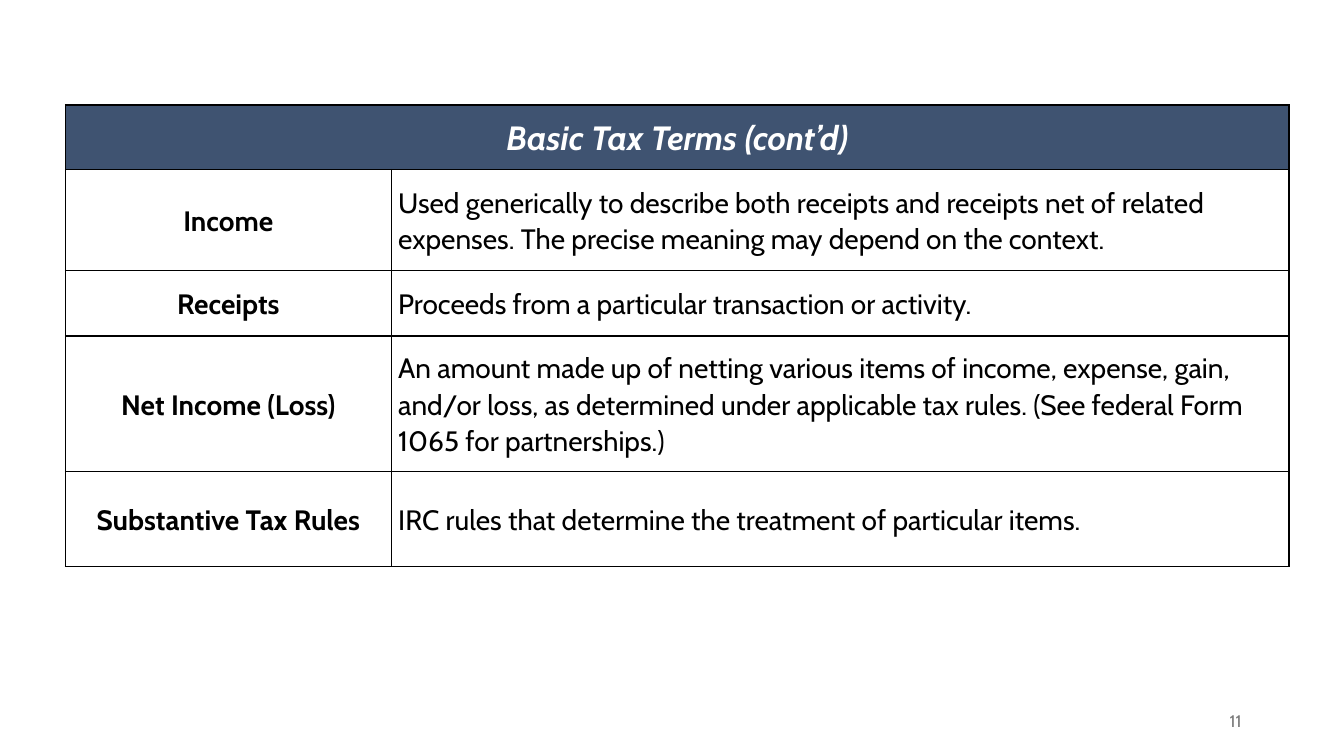
from lxml.etree import SubElement
from pptx import Presentation
from pptx.dml.color import RGBColor
from pptx.enum.text import MSO_ANCHOR, PP_ALIGN
from pptx.oxml.ns import qn
from pptx.util import Pt

HEAD = "Basic Tax Terms (cont’d)"
TERMS = [
    ("Income", "Used generically to describe both receipts and receipts net of "
     "related expenses. The precise meaning may depend on the context."),
    ("Receipts", "Proceeds from a particular transaction or activity."),
    ("Net Income (Loss)", "An amount made up of netting various items of income, "
     "expense, gain, and/or loss, as determined under applicable tax rules. "
     "(See federal Form 1065 for partnerships.)"),
    ("Substantive Tax Rules",
     "IRC rules that determine the treatment of particular items."),
]
PAGE = "11"
FONT = "Cabin"
NAVY = RGBColor(0x3F, 0x53, 0x71)
WHITE = RGBColor(0xFF, 0xFF, 0xFF)
BLACK = RGBColor(0, 0, 0)
GRAY = RGBColor(0x79, 0x79, 0x79)
LEFT, TOP = 46.8, 75
COLS = [232.6, 641.4]
ROWS = [46, 72.5, 46.5, 97, 68]


def write(frame, text, size, color, align, bold=False, slant=False):
    para = frame.paragraphs[0]
    para.text = text
    para.alignment = align
    font = para.font
    font.name, font.size = FONT, Pt(size)
    font.bold, font.italic = bold, slant
    font.color.rgb = color
    return para


def frame_cell(cell):
    props = cell._tc.get_or_add_tcPr()
    for side in ("lnL", "lnR", "lnT", "lnB"):
        line = SubElement(props, qn("a:" + side), w=str(Pt(1)))
        fill = SubElement(line, qn("a:solidFill"))
        SubElement(fill, qn("a:srgbClr"), val=str(BLACK))


def fill_cell(cell, text, *style):
    cell.vertical_anchor = MSO_ANCHOR.MIDDLE
    cell.margin_left = cell.margin_right = Pt(5)
    cell.margin_top = cell.margin_bottom = 0
    para = write(cell.text_frame, text, *style)
    para.line_spacing = 1.07
    para.space_after = Pt(6)


def add_terms(slide):
    table = slide.shapes.add_table(
        len(ROWS), len(COLS), Pt(LEFT), Pt(TOP),
        Pt(sum(COLS)), Pt(sum(ROWS))).table
    for col, width in zip(table.columns, COLS):
        col.width = Pt(width)
    for row, height in zip(table.rows, ROWS):
        row.height = Pt(height)
    for cell in table.iter_cells():
        frame_cell(cell)
        cell.fill.background()
    head = table.cell(0, 0)
    head.merge(table.cell(0, 1))
    head.fill.solid()
    head.fill.fore_color.rgb = NAVY
    fill_cell(head, HEAD, 24, WHITE, PP_ALIGN.CENTER, True, True)
    for row, (term, sense) in enumerate(TERMS, 1):
        fill_cell(table.cell(row, 0), term, 20, BLACK, PP_ALIGN.CENTER, True)
        fill_cell(table.cell(row, 1), sense, 20, BLACK, PP_ALIGN.LEFT)


def add_page(slide):
    box = slide.shapes.add_textbox(Pt(678), Pt(500.5), Pt(216), Pt(28.75))
    frame = box.text_frame
    frame.word_wrap = True
    frame.vertical_anchor = MSO_ANCHOR.MIDDLE
    write(frame, PAGE, 12, GRAY, PP_ALIGN.RIGHT)


def main():
    deck = Presentation()
    deck.slide_width, deck.slide_height = Pt(960), Pt(540)
    slide = deck.slides.add_slide(deck.slide_layouts[6])
    add_terms(slide)
    add_page(slide)
    deck.save("out.pptx")


if __name__ == "__main__":
    main()
